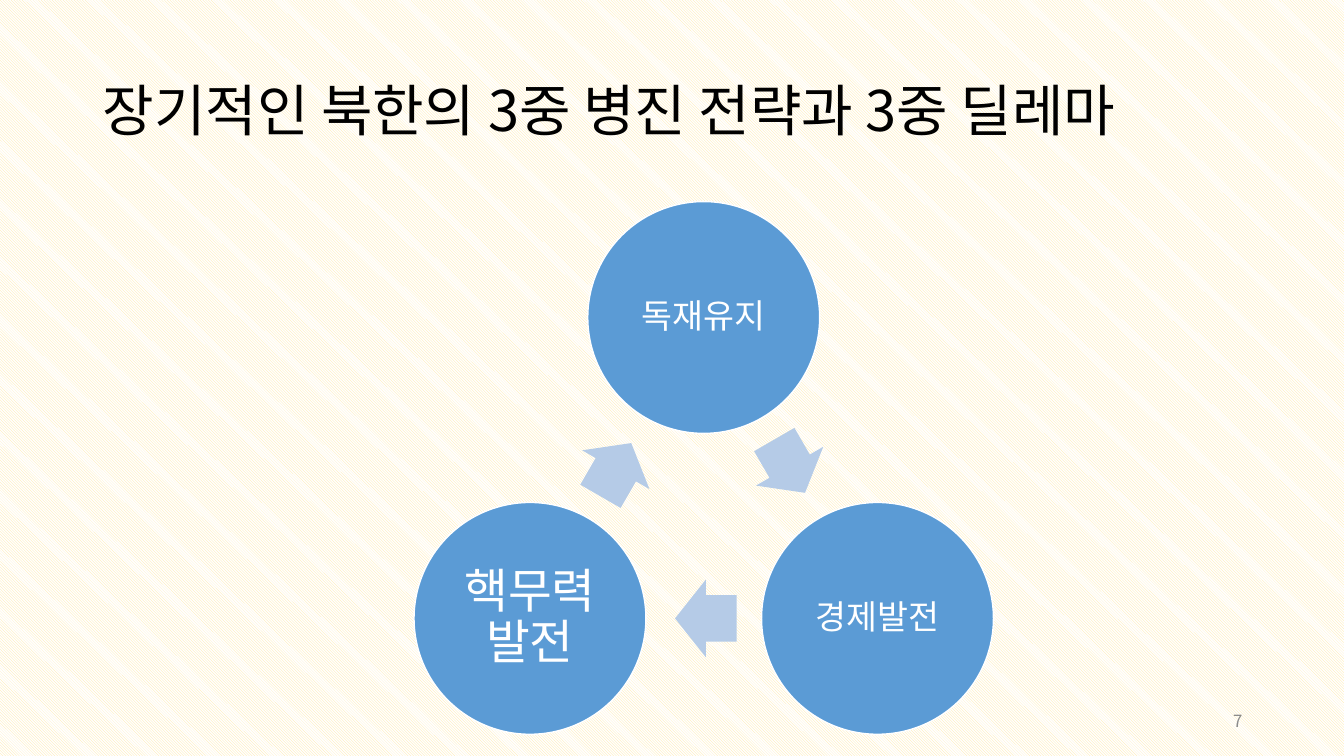
from dataclasses import dataclass
from math import cos, radians, sin

from lxml.etree import SubElement
from pptx import Presentation
from pptx.dml.color import RGBColor
from pptx.enum.dml import MSO_PATTERN
from pptx.enum.shapes import MSO_SHAPE as Preset
from pptx.enum.text import MSO_ANCHOR as Anchor, PP_ALIGN as Align
from pptx.oxml.ns import qn
from pptx.shapes.autoshape import Shape
from pptx.slide import Slide
from pptx.text.text import TextFrame
from pptx.util import Inches, Pt

CELL = Inches(0.1)  # square grid cell: 75 rows on the slide
FONT = "Noto Sans CJK KR"
COLORS = {
    "stripe": "FFE699",
    "white": "FFFFFF",
    "black": "000000",
    "circle": "5B9BD5",
    "arrow": "B5CBE7",
    "number": "8C8C8C",
}

# The cycle, in grid cells
CENTER_COL, CENTER_ROW = 69.8, 51.4
RADIUS = 19.9
DIAMETER = 23
ARROW_LENGTH, ARROW_WIDTH = 6.1, 7.7
ARROW_SETBACK = 0.2


@dataclass(frozen=True)
class Goal:
    label: str
    size: int
    inset: float


@dataclass(frozen=True)
class Caption:
    text: str
    col: float
    row: float
    cols: float
    rows: float
    size: int
    color: str
    align: Align
    spacing: float = 1.0


GOALS = [
    Goal("독재유지", 24, 0.3),
    Goal("경제발전", 24, 0.3),
    Goal("핵무력발전", 34, 0.5),
]
CAPTIONS = [
    Caption("장기적인 북한의 3중 병진 전략과 3중 딜레마",
            9.2, 4, 115, 14.5, 40, "black", Align.LEFT, 0.9),
    Caption("7", 94.2, 69.5, 30, 4, 12, "number", Align.RIGHT),
]


def cells(count: float) -> int:
    return round(count * CELL)


def color(name: str) -> RGBColor:
    return RGBColor.from_string(COLORS[name])


def write(frame: TextFrame, text: str, size: int, color_name: str,
          align: Align, spacing: float) -> None:
    frame.word_wrap = True
    frame.vertical_anchor = Anchor.MIDDLE
    para = frame.paragraphs[0]
    para.alignment = align
    para.line_spacing = spacing
    span = para.add_run()
    span.text = text
    span.font.size = Pt(size)
    span.font.color.rgb = color(color_name)
    span.font.name = FONT
    SubElement(span._r.get_or_add_rPr(), qn("a:ea"), typeface=FONT)


def add_caption(page: Slide, caption: Caption) -> None:
    box = page.shapes.add_textbox(cells(caption.col), cells(caption.row),
                                  cells(caption.cols), cells(caption.rows))
    write(box.text_frame, caption.text, caption.size, caption.color,
          caption.align, caption.spacing)


def add_centered(page: Slide, preset: Preset, col: float, row: float,
                 width: float, height: float, fill: str) -> Shape:
    """Draw a flat shape around the given grid point."""
    shape = page.shapes.add_shape(preset, cells(col - width / 2), cells(row - height / 2),
                                  cells(width), cells(height))
    shape.shadow.inherit = False
    shape.fill.solid()
    shape.fill.fore_color.rgb = color(fill)
    return shape


def add_goal(page: Slide, goal: Goal, angle: float) -> None:
    circle = add_centered(page, Preset.OVAL,
                          CENTER_COL + RADIUS * cos(radians(angle)),
                          CENTER_ROW + RADIUS * sin(radians(angle)),
                          DIAMETER, DIAMETER, "circle")
    circle.line.color.rgb = color("white")
    circle.line.width = Pt(1)
    frame = circle.text_frame
    frame.margin_left = frame.margin_right = cells(goal.inset)
    frame.margin_top = frame.margin_bottom = cells(goal.inset)
    write(frame, goal.label, goal.size, "white", Align.CENTER, 0.9)


def add_arrow(page: Slide, angle: float) -> None:
    """Point clockwise from the middle of one side of the triangle."""
    heading = angle + 90
    reach = RADIUS / 2
    arrow = add_centered(
        page, Preset.RIGHT_ARROW,
        CENTER_COL + reach * cos(radians(angle)) - ARROW_SETBACK * cos(radians(heading)),
        CENTER_ROW + reach * sin(radians(angle)) - ARROW_SETBACK * sin(radians(heading)),
        ARROW_LENGTH, ARROW_WIDTH, "arrow")
    arrow.line.fill.background()
    arrow.adjustments[0] = 0.6
    arrow.adjustments[1] = 0.5
    arrow.rotation = heading % 360


def main() -> None:
    deck = Presentation()
    deck.slide_width, deck.slide_height = Inches(13.33), Inches(7.5)
    page = deck.slides.add_slide(deck.slide_layouts[6])

    backdrop = page.background.fill
    backdrop.patterned()
    backdrop.pattern = MSO_PATTERN.LIGHT_DOWNWARD_DIAGONAL
    backdrop.fore_color.rgb = color("stripe")
    backdrop.back_color.rgb = color("white")

    step = 360 / len(GOALS)
    for index, goal in enumerate(GOALS):
        angle = index * step - 90
        add_goal(page, goal, angle)
        add_arrow(page, angle + step / 2)
    for caption in CAPTIONS:
        add_caption(page, caption)

    deck.save("out.pptx")


if __name__ == "__main__":
    main()
